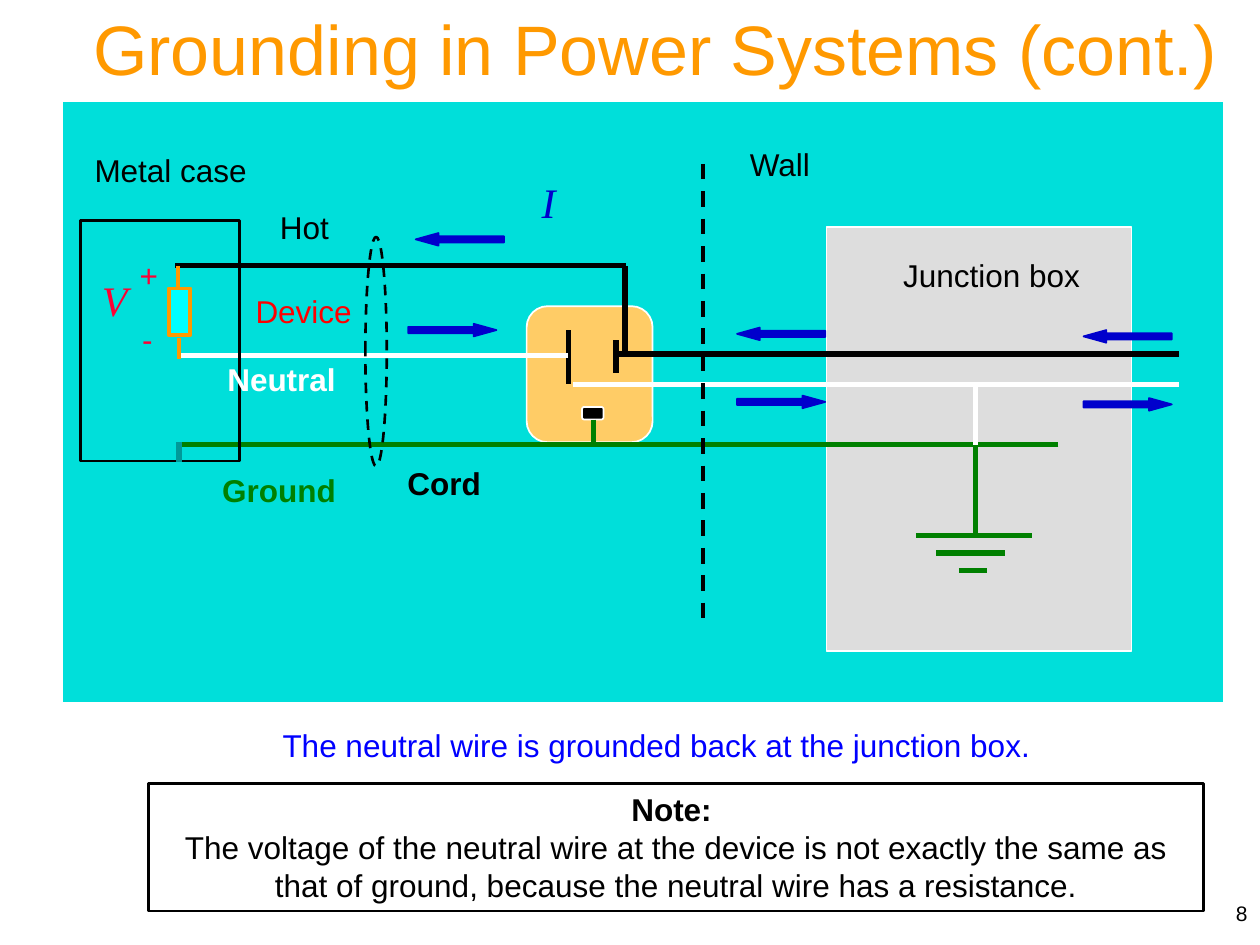
import pptx
import pptx.util
import pptx.dml.color
import pptx.enum.dml
import pptx.enum.shapes
import pptx.enum.text
import pptx.oxml.ns
from dataclasses import dataclass
from lxml import etree
from typing import Optional

Inches, Pt = pptx.util.Inches, pptx.util.Pt
MSO = pptx.enum.shapes.MSO_SHAPE
ALIGN = pptx.enum.text.PP_ALIGN
ANCHOR = pptx.enum.text.MSO_ANCHOR
AUTO = pptx.enum.text.MSO_AUTO_SIZE
DASH = pptx.enum.dml.MSO_LINE.DASH

COLORS = {
    "black": "000000", "white": "FFFFFF", "panel": "00DFDA", "box": "DDDDDD",
    "outlet": "FFCC66", "ground": "008000", "orange": "FF9900", "cyan": "00FFFF",
    "current": "0000CC", "voltage": "FF0033", "device": "FF0000",
    "blue": "0000FF", "teal": "009999",
}


@dataclass
class Block:
    kind: int
    x: float
    y: float
    w: float
    h: float
    fill: Optional[str]
    line: str = "white"
    width: float = 1
    dashed: bool = False
    adjustments: tuple = ()


@dataclass
class Wire:
    x1: float
    y1: float
    x2: float
    y2: float
    color: str
    width: float = 3
    dashed: bool = False


@dataclass
class Label:
    text: str
    x: float
    y: float
    w: float
    h: float = 0.4
    color: str = "black"
    size: float = 18
    bold: bool = False
    italic: bool = False
    font: str = "Arial"
    align: int = ALIGN.CENTER
    wrap: bool = False


def rgb(name: str) -> pptx.dml.color.RGBColor:
    return pptx.dml.color.RGBColor.from_string(COLORS[name])


def style_line(line, color: str, width: float, dashed: bool) -> None:
    line.color.rgb = rgb(color)
    line.width = Pt(width)
    if dashed:
        line.dash_style = DASH


def draw_block(s, b: Block) -> None:
    sp = s.shapes.add_shape(b.kind, Inches(b.x), Inches(b.y), Inches(b.w), Inches(b.h))
    sp.shadow.inherit = False
    for i, value in enumerate(b.adjustments):
        sp.adjustments[i] = value
    if b.fill:
        sp.fill.solid()
        sp.fill.fore_color.rgb = rgb(b.fill)
    else:
        sp.fill.background()
    style_line(sp.line, b.line, b.width, b.dashed)


def draw_wire(s, w: Wire) -> None:
    cx = s.shapes.add_connector(
        pptx.enum.shapes.MSO_CONNECTOR.STRAIGHT,
        Inches(w.x1), Inches(w.y1), Inches(w.x2), Inches(w.y2))
    style_line(cx.line, w.color, w.width, w.dashed)
    etree.SubElement(cx._element.spPr, pptx.oxml.ns.qn("a:effectLst"))


def write_text(sp, t: Label) -> None:
    sp.left, sp.top, sp.width, sp.height = map(Inches, (t.x, t.y, t.w, t.h))
    tf = sp.text_frame
    tf.text = t.text
    tf.word_wrap = t.wrap
    tf.auto_size = AUTO.NONE
    tf.vertical_anchor = ANCHOR.TOP
    for p in tf.paragraphs:
        p.alignment = t.align
        for r in p.runs:
            r.font.name, r.font.size = t.font, Pt(t.size)
            r.font.bold, r.font.italic = t.bold, t.italic
            r.font.color.rgb = rgb(t.color)


def draw_label(s, t: Label):
    sp = s.shapes.add_textbox(0, 0, 0, 0)
    write_text(sp, t)
    return sp


def current_arrow(kind: int, x: float, y: float) -> Block:
    return Block(kind, x, y, 0.7, 0.1, "current", "current", adjustments=(0.5, 1.804))


BACKGROUND = [
    Block(MSO.RECTANGLE, 0.49, 0.8, 9.22, 4.78, "panel"),
    Block(MSO.RECTANGLE, 6.56, 1.8, 2.42, 3.37, "box"),
    Block(MSO.ROUNDED_RECTANGLE, 4.18, 2.43, 1, 1.08, "outlet", adjustments=(0.167,)),
    Block(MSO.ROUNDED_RECTANGLE, 4.62, 3.23, 0.17, 0.1, "black", adjustments=(0.167,)),
]

WIRES = [
    Wire(4.51, 2.62, 4.51, 3.05, "black"),
    Wire(4.89, 2.7, 4.89, 2.96, "black"),
    Wire(8.4, 3.53, 1.41, 3.53, "ground"),
    Wire(7.74, 3.54, 7.74, 4.25, "ground"),
    Wire(7.27, 4.25, 8.19, 4.25, "ground"),
    Wire(7.43, 4.39, 7.98, 4.39, "ground"),
    Wire(7.61, 4.53, 7.83, 4.53, "ground"),
    Wire(1.42, 2.82, 4.51, 2.82, "white"),
    Wire(1.39, 2.11, 4.97, 2.11, "black"),
    Wire(4.96, 2.11, 4.96, 2.81, "black"),
    Wire(4.71, 3.33, 4.71, 3.53, "ground"),
    Wire(1.41, 2.11, 1.41, 2.28, "orange", 2.25),
    Wire(1.42, 2.68, 1.42, 2.85, "orange", 2.25),
    Wire(4.9, 2.81, 9.36, 2.81, "black"),
    Wire(4.55, 3.05, 9.36, 3.05, "white"),
    Wire(7.74, 3.05, 7.74, 3.53, "white"),
    Wire(5.58, 1.3, 5.58, 4.96, "black", 2.25, True),
]

FOREGROUND = [
    current_arrow(MSO.LEFT_ARROW, 3.3, 1.85),
    current_arrow(MSO.RIGHT_ARROW, 3.24, 2.57),
    current_arrow(MSO.LEFT_ARROW, 5.85, 2.6),
    current_arrow(MSO.RIGHT_ARROW, 5.85, 3.14),
    current_arrow(MSO.LEFT_ARROW, 8.6, 2.62),
    current_arrow(MSO.RIGHT_ARROW, 8.6, 3.16),
    Block(MSO.RECTANGLE, 1.34, 2.29, 0.17, 0.37, "cyan", "orange", 2.25),
    Block(MSO.RECTANGLE, 0.64, 1.75, 1.26, 1.91, None, "black", 1.5),
    Block(MSO.OVAL, 2.9, 1.88, 0.17, 1.82, None, "black", 1.5, True),
]

CASE_GROUND = Wire(1.42, 3.51, 1.42, 3.67, "teal")

LABELS = [
    Label("Metal case", 0.59, 1.15, 1.53, wrap=True),
    Label("Hot", 2.12, 1.6, 0.59),
    Label("Neutral", 1.7, 2.81, 1.07, color="white", bold=True),
    Label("Ground", 1.66, 3.69, 1.11, color="ground", bold=True),
    Label("Cord", 3.13, 3.63, 0.79, bold=True),
    Label("Wall", 5.85, 1.1, 0.68),
    Label("Junction box", 7.06, 1.98, 1.62),
    Label("Device", 1.93, 2.27, 0.97, color="device", align=ALIGN.LEFT),
    Label("+", 1.01, 1.98, 0.35, color="voltage", align=ALIGN.LEFT),
    Label("-", 1.03, 2.49, 0.28, color="voltage", align=ALIGN.LEFT),
    Label("V", 0.71, 2.13, 0.4, 0.5, "voltage", 24, italic=True,
          font="Times New Roman", align=ALIGN.LEFT),
    Label("I", 4.2, 1.35, 0.31, 0.5, "current", 24, italic=True,
          font="Times New Roman", align=ALIGN.LEFT),
    Label("The neutral wire is grounded back at the junction box.",
          2.13, 5.71, 6.16, color="blue", wrap=True),
]

TITLE = Label("Grounding in Power Systems (cont.)", 0.64, -0.01, 9.22, 0.77,
              "orange", 40, align=ALIGN.LEFT)
NOTE = Label("Note: \nThe voltage of the neutral wire at the device is not exactly the same "
             "as that of ground, because the neutral wire has a resistance.",
             1.18, 6.22, 8.37, 1.01, wrap=True)
PAGE_NUMBER = Label("8", 7.92, 7, 2.08, 0.5, size=12, align=ALIGN.RIGHT, wrap=True)


def main() -> None:
    prs = pptx.Presentation()
    prs.slide_width, prs.slide_height = Inches(10), Inches(7.5)
    s = prs.slides.add_slide(prs.slide_layouts[5])
    write_text(s.shapes.title, TITLE)
    for block in BACKGROUND:
        draw_block(s, block)
    for wire in WIRES:
        draw_wire(s, wire)
    for block in FOREGROUND:
        draw_block(s, block)
    draw_wire(s, CASE_GROUND)
    for label in LABELS:
        draw_label(s, label)
    note = draw_label(s, NOTE)
    style_line(note.line, "black", 1.5, False)
    note.text_frame.paragraphs[0].runs[0].font.bold = True
    draw_label(s, PAGE_NUMBER).text_frame.vertical_anchor = ANCHOR.MIDDLE
    prs.save("out.pptx")


if __name__ == "__main__":
    main()
